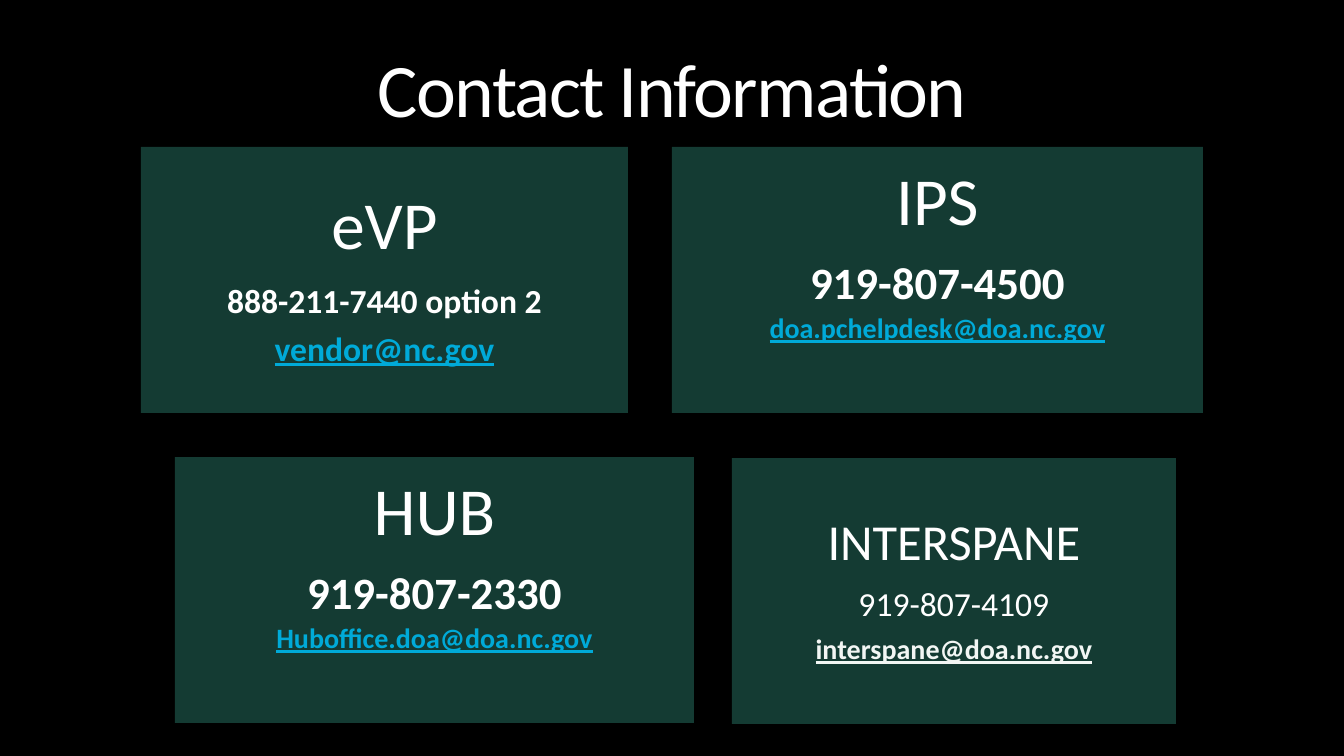
import pptx
import pptx.util
import pptx.dml.color
import pptx.enum.shapes
import pptx.enum.text

BLACK = pptx.dml.color.RGBColor(0x00, 0x00, 0x00)
WHITE = pptx.dml.color.RGBColor(0xFF, 0xFF, 0xFF)
GREEN = pptx.dml.color.RGBColor(0x14, 0x3B, 0x33)
LINK_BLUE = pptx.dml.color.RGBColor(0x00, 0xAA, 0xD8)
PALE = pptx.dml.color.RGBColor(0xF2, 0xF6, 0xF4)
TOP = pptx.enum.text.MSO_ANCHOR.TOP
MIDDLE = pptx.enum.text.MSO_ANCHOR.MIDDLE
CENTER = pptx.enum.text.PP_ALIGN.CENTER


def px(value):
    return pptx.util.Emu(round(value * 914400 / 100.8))


def format_line(paragraph, size, color, bold, underline, spacing):
    paragraph.alignment = CENTER
    paragraph.line_spacing = spacing
    font = paragraph.runs[0].font
    font.name = "Calibri"
    font.size = pptx.util.Pt(size)
    font.color.rgb = color
    font.bold = bold
    font.underline = underline


presentation = pptx.Presentation()
presentation.slide_width = px(1344)
presentation.slide_height = px(756)
slide = presentation.slides.add_slide(presentation.slide_layouts[5])
slide.background.fill.solid()
slide.background.fill.fore_color.rgb = BLACK

title = slide.shapes.title
title.left, title.top, title.width, title.height = px(67), px(31), px(1210), px(126)
title.text_frame.text = "Contact Information"
title.text_frame.auto_size = pptx.enum.text.MSO_AUTO_SIZE.NONE
title.text_frame.vertical_anchor = MIDDLE
title_paragraph = title.text_frame.paragraphs[0]
format_line(title_paragraph, 54, WHITE, False, False, 0.85)
title_paragraph.runs[0].font._element.set("spc", "-120")

cards = [
    (141, 147, 487, 20, MIDDLE, [
        ("eVP", 48, WHITE, False, False, 15),
        ("888-211-7440 option 2", 24, WHITE, True, False, 8),
        ("vendor@nc.gov", 24, LINK_BLUE, True, True, 0)]),
    (672, 147, 531, 20, TOP, [
        ("IPS", 48, WHITE, False, False, 15),
        ("919-807-4500", 32, WHITE, True, False, 4),
        ("doa.pchelpdesk@doa.nc.gov", 20, LINK_BLUE, True, True, 0)]),
    (175, 457, 519, 20, TOP, [
        ("HUB", 48, WHITE, False, False, 15),
        ("919-807-2330", 32, WHITE, True, False, 4),
        ("Huboffice.doa@doa.nc.gov", 20, LINK_BLUE, True, True, 0)]),
    (732, 458, 444, 15, MIDDLE, [
        ("INTERSPANE", 36, WHITE, False, False, 12),
        ("919-807-4109", 24, WHITE, False, False, 8),
        ("interspane@doa.nc.gov", 20, PALE, True, True, 0)]),
]

for left, top, width, inset, anchor, lines in cards:
    card = slide.shapes.add_shape(
        pptx.enum.shapes.MSO_SHAPE.RECTANGLE, px(left), px(top), px(width), px(266))
    card.shadow.inherit = False
    card.fill.solid()
    card.fill.fore_color.rgb = GREEN
    card.line.fill.background()
    frame = card.text_frame
    frame.word_wrap = True
    frame.vertical_anchor = anchor
    frame.margin_left = frame.margin_right = px(inset)
    frame.margin_top = frame.margin_bottom = px(inset)
    frame.text = "\n".join(line[0] for line in lines)
    for paragraph, line in zip(frame.paragraphs, lines):
        wording, size, color, bold, underline, space_after = line
        format_line(paragraph, size, color, bold, underline, 0.9)
        paragraph.space_after = pptx.util.Pt(space_after)

presentation.save("out.pptx")
